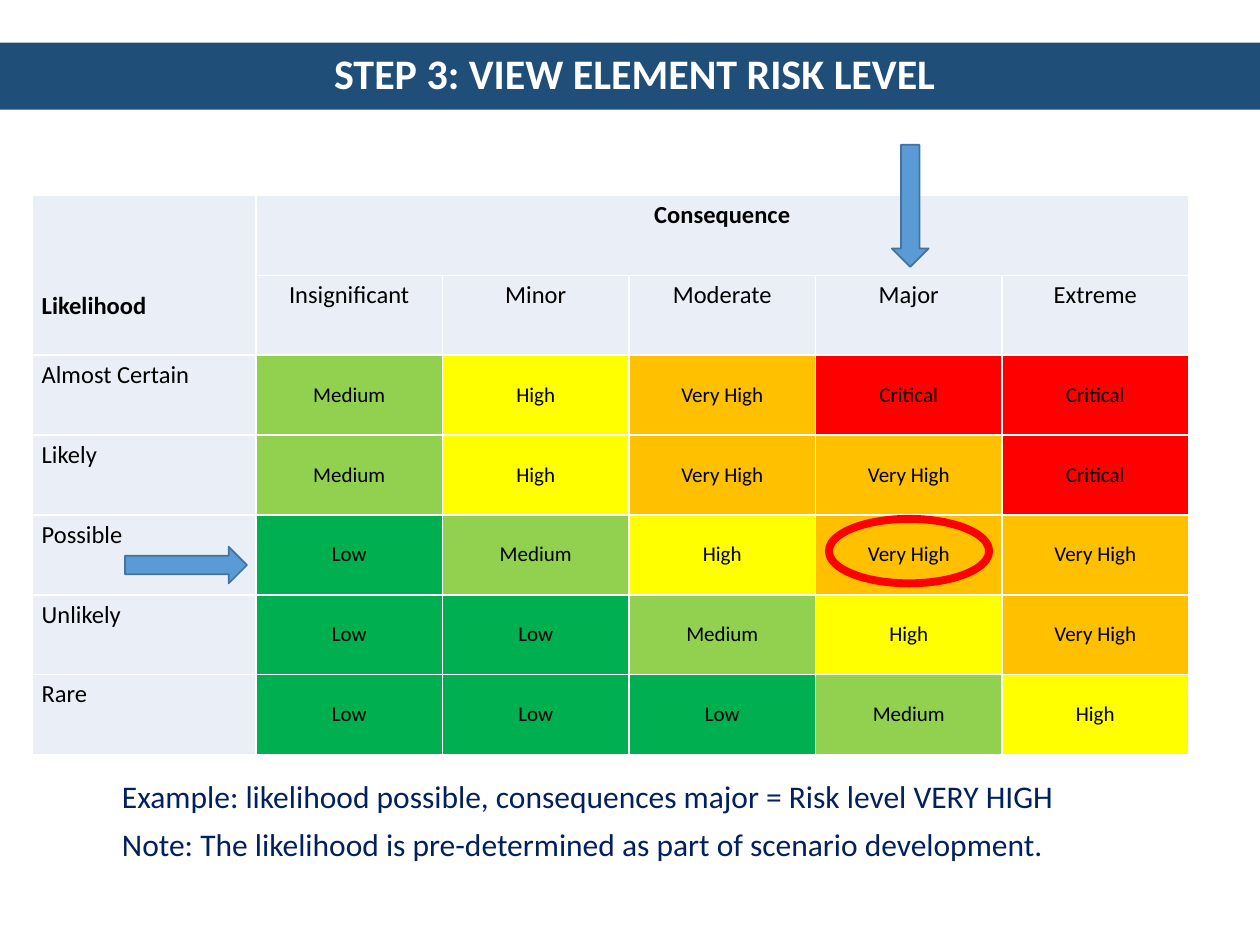
from lxml.etree import SubElement
from pptx import Presentation
from pptx.dml.color import RGBColor
from pptx.enum.shapes import MSO_SHAPE
from pptx.enum.text import MSO_ANCHOR, MSO_AUTO_SIZE, PP_ALIGN
from pptx.oxml.ns import qn
from pptx.util import Cm, Pt


def style_text(paragraph, size, color, bold=False, align=PP_ALIGN.LEFT):
    paragraph.alignment = align
    paragraph.font.name = "Calibri"
    paragraph.font.size = Pt(size)
    paragraph.font.bold = bold
    paragraph.font.color.rgb = RGBColor.from_string(color)


def add_mark(preset, left, top, width, height, fill, line, line_width=1):
    mark = slide.shapes.add_shape(preset, Cm(left), Cm(top), Cm(width), Cm(height))
    mark.shadow.inherit = False
    if fill:
        mark.fill.solid()
        mark.fill.fore_color.rgb = RGBColor.from_string(fill)
    else:
        mark.fill.background()
    if line:
        mark.line.color.rgb = RGBColor.from_string(line)
        mark.line.width = Pt(line_width)
    else:
        mark.line.fill.background()
    return mark


HEADING_FILL = "EAEFF7"
LEVELS = {
    "L": ("Low", "00B050"),
    "M": ("Medium", "92D050"),
    "H": ("High", "FFFF00"),
    "V": ("Very High", "FFC000"),
    "C": ("Critical", "FF0000"),
}
CONSEQUENCES = ["Insignificant", "Minor", "Moderate", "Major", "Extreme"]
RISKS = {
    "Almost Certain": "MHVCC",
    "Likely": "MHVVC",
    "Possible": "LMHVV",
    "Unlikely": "LLMHV",
    "Rare": "LLLMH",
}

prs = Presentation()
prs.slide_width, prs.slide_height = Cm(25.4), Cm(19.05)
slide = prs.slides.add_slide(prs.slide_layouts[6])

# Risk matrix
matrix = slide.shapes.add_table(
    7, 6, Cm(0.66), Cm(3.94), Cm(23.3), Cm(11.27)
).table
matrix.first_row = False
matrix.horz_banding = False
for column in matrix.columns:
    column.width = Cm(3.76)
matrix.columns[0].width = Cm(4.5)
for row in matrix.rows:
    row.height = Cm(1.61)

content = [["Likelihood", "Consequence", "", "", "", ""], ["", *CONSEQUENCES]]
content += [[likelihood, *levels] for likelihood, levels in RISKS.items()]

for r, entries in enumerate(content):
    for c, entry in enumerate(entries):
        cell = matrix.cell(r, c)
        is_level = entry in LEVELS
        text, fill = LEVELS.get(entry, (entry, HEADING_FILL))
        cell.text = text
        cell.margin_left = cell.margin_right = Cm(0.18)
        cell.margin_top = cell.margin_bottom = Cm(0.1)
        cell.vertical_anchor = MSO_ANCHOR.MIDDLE if is_level else MSO_ANCHOR.TOP
        style_text(
            cell.text_frame.paragraphs[0],
            12 if is_level else 14,
            "000000",
            bold=r == 0,
            align=PP_ALIGN.CENTER if c else PP_ALIGN.LEFT,
        )
        properties = cell._tc.get_or_add_tcPr()
        for side in ("a:lnL", "a:lnR", "a:lnT", "a:lnB"):
            border = SubElement(properties, qn(side), w=str(Pt(1)))
            border_fill = SubElement(border, qn("a:solidFill"))
            SubElement(border_fill, qn("a:srgbClr"), val="FFFFFF")
        cell.fill.solid()
        cell.fill.fore_color.rgb = RGBColor.from_string(fill)

likelihood_heading = matrix.cell(0, 0)
likelihood_heading.merge(matrix.cell(1, 0))
likelihood_heading.vertical_anchor = MSO_ANCHOR.BOTTOM
likelihood_heading.margin_bottom = Cm(0.7)
matrix.cell(0, 1).merge(matrix.cell(0, 5))

# Arrows to the example's column and row, and the ring where they meet
for left, top, rotation in [(17.98, 2.92, 0), (3.38, 10.16, 270)]:
    arrow = add_mark(
        MSO_SHAPE.DOWN_ARROW, left, top, 0.74, 2.46, "5B9BD5", "43739E"
    )
    arrow.rotation = rotation
add_mark(MSO_SHAPE.OVAL, 16.71, 10.46, 3.23, 1.3, None, "FF0000", 4.5)

# Explanation
explanation = slide.shapes.add_textbox(
    Cm(2.21), Cm(15.54), Cm(20.96), Cm(2.01)
).text_frame
explanation.word_wrap = True
explanation.auto_size = MSO_AUTO_SIZE.SHAPE_TO_FIT_TEXT
explanation.text = (
    "Example: likelihood possible, consequences major = Risk level VERY HIGH\n"
    "Note: The likelihood is pre-determined as part of scenario development."
)
for paragraph in explanation.paragraphs:
    style_text(paragraph, 18, "002060")
explanation.paragraphs[1].space_before = Pt(6)

# Title band
title = add_mark(
    MSO_SHAPE.RECTANGLE, 0, 0.86, 25.4, 1.35, "1F4E79", None
).text_frame
title.text = " STEP 3: VIEW ELEMENT RISK LEVEL"
title.vertical_anchor = MSO_ANCHOR.MIDDLE
title.paragraphs[0].line_spacing = 0.9
style_text(title.paragraphs[0], 24, "FFFFFF", bold=True, align=PP_ALIGN.CENTER)

prs.save("out.pptx")
